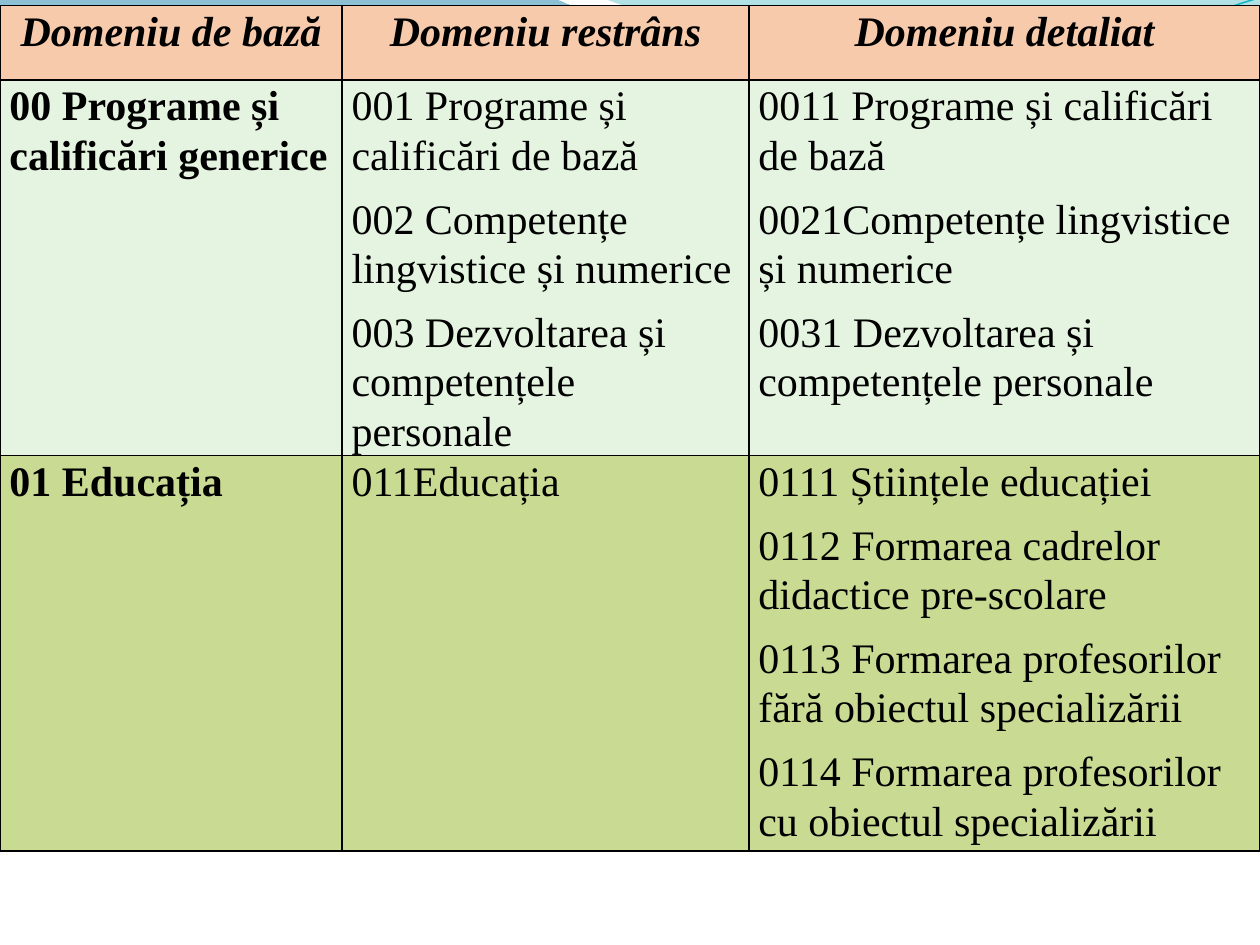
from lxml import etree
from pptx import Presentation
from pptx import util as u
from pptx.dml.color import RGBColor
from pptx.enum import text
from pptx.oxml.ns import qn

HEADER = ["Domeniu de bază", "Domeniu restrâns", "Domeniu detaliat"]
BODY = [
    ("E5F4E0", [
        ["00 Programe și calificări generice"],
        ["001 Programe și calificări de bază",
         "002 Competențe lingvistice și numerice",
         "003 Dezvoltarea și competențele personale"],
        ["0011 Programe și calificări de bază",
         "0021Competențe lingvistice și numerice",
         "0031 Dezvoltarea și competențele personale"]]),
    ("C9DA92", [
        ["01 Educația"],
        ["011Educația"],
        ["0111 Științele educației",
         "0112 Formarea cadrelor didactice pre-scolare",
         "0113 Formarea profesorilor fără obiectul specializării",
         "0114 Formarea profesorilor cu obiectul specializării"]]),
]

# Outlines in points: a pair is a corner, six numbers are a Bézier curve.
BROAD_WAVE = [(-1, -1), (317, -1), (343, 12, 478, 45, 546, 45),
              (614, 45, 690, 19, 720, 6), (721, 26),
              (708, 32, 626, 55, 537, 54), (448, 54, 275, 20, 185, 24),
              (93, 26, 33, 60, -1, 81)]
RIGHT_WAVE = [(345, -1), (367, 8, 491, 45, 554, 47),
              (616, 50, 692, 23, 720, 15), (720, 0)]
TEAL_LINE = [(0, 80), (35, 67, 114, 41, 199, 37),
             (284, 34, 427, 64, 513, 58), (600, 51, 675, 11, 719, -1)]
BLUE_LINE = [(0, 75), (34, 69, 118, 44, 204, 40),
             (290, 37, 430, 60, 516, 54), (602, 48, 674, 15, 720, 4)]


def rgb(value):
    return RGBColor.from_string(value)


def bend(sp, parts):
    """Turn the straight segments that stand for Bézier curves into curves."""
    for segment, part in zip(list(sp.element.iter(qn("a:lnTo"))), parts):
        if len(part) == 2:
            continue
        curve = etree.Element(qn("a:cubicBezTo"))
        for x, y in zip(part[::2], part[1::2]):
            etree.SubElement(curve, qn("a:pt"), x=str(u.Pt(x) - sp.left),
                             y=str(u.Pt(y) - sp.top))
        segment.getparent().replace(segment, curve)


def write(p, content, bold=False, italic=False, align=text.PP_ALIGN.LEFT,
          size=24, color="000000", font="Times New Roman"):
    p.alignment = align
    p.line_spacing = 1.07
    p.space_after = u.Pt(8)
    r = p.add_run()
    r.text = content
    r.font.name, r.font.size = font, u.Pt(size)
    r.font.bold, r.font.italic = bold, italic
    r.font.color.rgb = rgb(color)


class Deck:
    border = "000000"
    inset = 5.4

    def __init__(self, prs):
        self.master = prs.slide_master
        self.slide = prs.slides.add_slide(prs.slide_layouts[6])

    def outline(self, outline, close):
        """Draw an outline and move it to the slide master."""
        ends = [(u.Pt(part[-2]), u.Pt(part[-1])) for part in outline]
        builder = self.slide.shapes.build_freeform(*ends[0])
        builder.add_line_segments(ends[1:], close=close)
        sp = builder.convert_to_shape()
        bend(sp, outline[1:])
        sp.shadow.inherit = False
        number = 20 + len(self.master.shapes)
        sp.element.nvSpPr.cNvPr.set("id", str(number))
        self.master.shapes.element.append(sp.element)
        return sp

    def wave(self, outline, stops):
        """Draw a vertical gradient; stops hold position, colour and opacity %."""
        sp = self.outline(outline, True)
        sp.line.fill.background()
        sp.fill.gradient()
        sp.fill.gradient_angle = 270
        for stop, (position, color, _) in zip(sp.fill.gradient_stops, stops):
            stop.position = position
            stop.color.rgb = rgb(color)
        colors = sp.element.spPr.iterfind(".//" + qn("a:gs") + "/" + qn("a:srgbClr"))
        for node, (_, _, opacity) in zip(colors, stops):
            etree.SubElement(node, qn("a:alpha")).set("val", str(opacity * 1000))

    def curve(self, outline, color, width):
        sp = self.outline(outline, False)
        sp.fill.background()
        sp.line.color.rgb = rgb(color)
        sp.line.width = u.Pt(width)

    def table(self, top, widths, heights, frame_height):
        frame = self.slide.shapes.add_table(
            len(heights), len(widths), 0, u.Pt(top),
            u.Pt(sum(widths)), u.Pt(frame_height))
        table = frame.table
        table.first_row = table.horz_banding = False
        for column, width in zip(table.columns, widths):
            column.width = u.Pt(width)
        for row, height in zip(table.rows, heights):
            row.height = u.Pt(height)
        frame.height = u.Pt(frame_height)
        return table

    def cell(self, cell, lines, fill, **style):
        tc_pr = cell._tc.get_or_add_tcPr()
        for side in ("lnL", "lnR", "lnT", "lnB"):
            ln = etree.SubElement(tc_pr, qn("a:" + side), w=str(u.Pt(1)))
            solid = etree.SubElement(ln, qn("a:solidFill"))
            etree.SubElement(solid, qn("a:srgbClr"), val=self.border)
        cell.fill.solid()
        cell.fill.fore_color.rgb = rgb(fill)
        cell.margin_left = cell.margin_right = u.Pt(self.inset)
        cell.margin_top = cell.margin_bottom = 0
        tf = cell.text_frame
        for i, line in enumerate(lines):
            write(tf.add_paragraph() if i else tf.paragraphs[0], line, **style)


def main():
    prs = Presentation()
    prs.slide_width, prs.slide_height = u.Pt(720), u.Pt(540)
    deck = Deck(prs)

    deck.wave(BROAD_WAVE, [(0, "0074A1", 45), (1, "00C6CF", 55)])
    deck.wave(RIGHT_WAVE, [(0, "00A1A9", 30), (0.8, "008BBF", 45)])
    deck.curve(TEAL_LINE, "0AB8BF", 0.85)
    deck.curve(BLUE_LINE, "0F6FC6", 0.75)

    table = deck.table(3.3, [195.5, 232.5, 292], [42.5, 186, 226], 513.4)
    for col, title in enumerate(HEADER):
        deck.cell(table.cell(0, col), [title], "F7CAAC", bold=True, italic=True,
                  align=text.PP_ALIGN.CENTER)
    for row, (fill, cells) in enumerate(BODY, 1):
        for col, lines in enumerate(cells):
            deck.cell(table.cell(row, col), lines, fill, bold=col == 0)

    prs.save("out.pptx")


if __name__ == "__main__":
    main()
